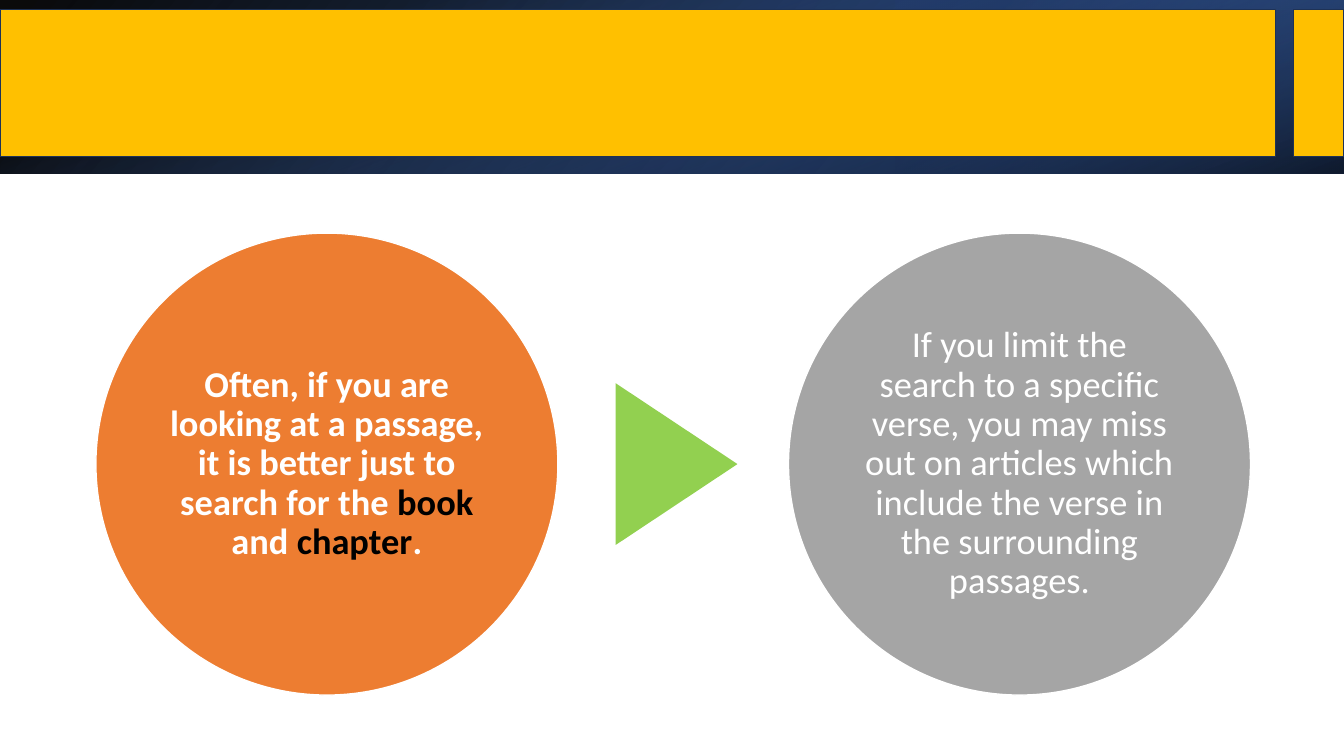
from dataclasses import dataclass

from lxml import etree
from pptx import Presentation
from pptx import util as u
from pptx.dml import color
from pptx.enum import shapes, text
from pptx.oxml import ns

Kind = shapes.MSO_SHAPE


@dataclass(frozen=True)
class Theme:
    font: str = "Calibri"
    size: float = 26
    edge: float = 1
    inset: float = 3.6
    white: str = "FFFFFF"
    black: str = "000000"
    navy: str = "203864"
    blue: str = "2F5597"
    sky: str = "4472C4"
    rim: str = "1E3256"
    gold: str = "FFC000"
    orange: str = "ED7D31"
    gray: str = "A5A5A5"
    green: str = "92D050"


def rgb(code):
    return color.RGBColor.from_string(code)


class Deck:
    def __init__(self, theme, wide, high):
        self.theme = theme
        self.show = Presentation()
        self.show.slide_width, self.show.slide_height = u.Pt(wide), u.Pt(high)
        self.slide = self.show.slides.add_slide(self.show.slide_layouts[6])

    def shape(self, kind, box, fill=None, line=None, turn=0):
        item = self.slide.shapes.add_shape(kind, *map(u.Pt, box))
        item.shadow.inherit = False
        item.rotation = turn
        if fill:
            item.fill.solid()
            item.fill.fore_color.rgb = rgb(fill)
        if line:
            item.line.color.rgb = rgb(line)
            item.line.width = u.Pt(self.theme.edge)
        else:
            item.line.fill.background()
        return item

    def blend(self, box, stops, angle, turn=0, flip=False):
        """Add a rectangle with a linear gradient; stops are (place, colour, opacity) in percent."""
        item = self.shape(Kind.RECTANGLE, box, turn=turn)
        props = item._element.spPr
        if flip:
            props.find(ns.qn("a:xfrm")).set("flipH", "1")
        grad = etree.Element(ns.qn("a:gradFill"), rotWithShape="1")
        row = etree.SubElement(grad, ns.qn("a:gsLst"))
        for place, code, alpha in stops:
            stop = etree.SubElement(row, ns.qn("a:gs"), pos=str(place * 1000))
            tint = etree.SubElement(stop, ns.qn("a:srgbClr"), val=code)
            etree.SubElement(tint, ns.qn("a:alpha"), val=str(alpha * 1000))
        etree.SubElement(grad, ns.qn("a:lin"), ang=str(angle * 60000), scaled="0")
        props.find(ns.qn("a:prstGeom")).addnext(grad)

    def circle(self, box, fill, runs, bold=False):
        """Add a circle with centred text; runs are (words, colour)."""
        item = self.shape(Kind.OVAL, box, fill, self.theme.white)
        frame = item.text_frame
        frame.word_wrap = True
        frame.vertical_anchor = text.MSO_ANCHOR.MIDDLE
        frame.margin_left = frame.margin_right = u.Pt(self.theme.inset)
        frame.margin_top = frame.margin_bottom = u.Pt(self.theme.inset)
        para = frame.paragraphs[0]
        para.alignment = text.PP_ALIGN.CENTER
        para.line_spacing = 0.9
        for words, code in runs:
            run = para.add_run()
            run.text = words
            run.font.name = self.theme.font
            run.font.size = u.Pt(self.theme.size)
            run.font.bold = bold
            run.font.color.rgb = rgb(code)


def main():
    look = Theme()
    wide, high, band = 960, 540, 124
    deck = Deck(look, wide, high)

    deck.blend((0, 0, wide, band),
               [(0, look.black, 96), (100, look.blue, 100)], 140, flip=True)
    deck.blend((wide * 2 / 3, 0, wide / 3, band),
               [(19, look.navy, 68), (100, look.sky, 79)], 320, turn=180, flip=True)
    # Upright strip, turned a quarter to lie across the band
    deck.blend(((wide - band) / 2, (band - wide) / 2, band, wide),
               [(23, look.sky, 0), (99, look.black, 74)], 340, turn=90)

    size, top = 330, 166.5
    deck.circle((68.5, top, size, size), look.orange, [
        ("Often, if you are looking at a passage, it is better just to search for the ", look.white),
        ("book", look.black),
        (" and ", look.white),
        ("chapter", look.black),
        (".", look.white),
    ], bold=True)
    base, tip = 115.5, 87
    deck.shape(Kind.ISOSCELES_TRIANGLE,
               (425.5, top + (size - tip) / 2, base, tip), look.green, turn=90)
    deck.circle((563.25, top, size, size), look.gray, [
        ("If you limit the search to a specific verse, you may miss out on articles "
         "which include the verse in the surrounding passages.", look.white),
    ])

    for left, span in ((0, 911.25), (924, 36)):
        deck.shape(Kind.RECTANGLE, (left, 6.75, span, 105), look.gold, look.rim)

    deck.show.save("out.pptx")


if __name__ == "__main__":
    main()
